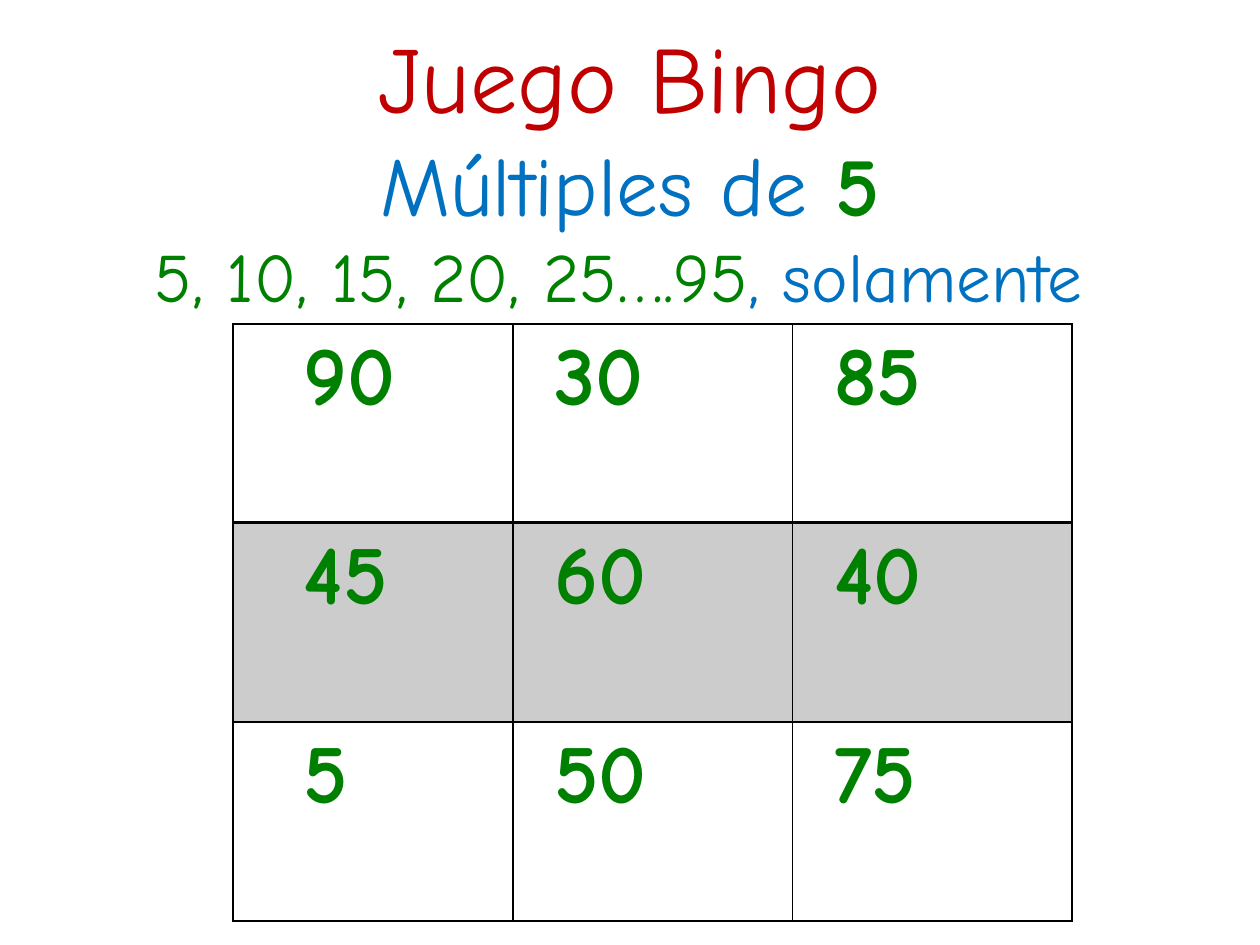
from dataclasses import dataclass

from lxml import etree
from pptx import Presentation
from pptx import util as u
from pptx.dml.color import RGBColor
from pptx.enum import text
from pptx.oxml.ns import qn


@dataclass(frozen=True)
class Theme:
    font: str = "Comic Neue"
    red: str = "C00000"
    blue: str = "0070C0"
    green: str = "008000"
    black: str = "000000"
    title_size: float = 54
    subtitle_size: float = 47.7
    series_size: float = 39.6
    number_size: float = 48
    line: float = 1
    heavy_line: float = 2
    shade_percent: int = 20


THEME = Theme()
WIDTH, HEIGHT = u.Inches(10), u.Inches(7.5)

# Each line of the heading is a list of runs: wording, size, colour, bold
HEADING = [
    [("Juego Bingo", THEME.title_size, THEME.red, False)],
    [("Múltiples de ", THEME.subtitle_size, THEME.blue, False),
     ("5", THEME.subtitle_size, THEME.green, True)],
    [("5, 10, 15, 20, 25….95", THEME.series_size, THEME.green, False),
     (", solamente ", THEME.series_size, THEME.blue, False)],
]
NUMBERS = [[90, 30, 85], [45, 60, 40], [5, 50, 75]]
SHADED_ROW = 1
INDENTS = [0.56, 0.33, 0.33]  # left inset of each column, inches


def add_run(paragraph, wording, size, color, bold):
    run = paragraph.add_run()
    run.text = wording
    run.font.name = THEME.font
    run.font.size = u.Pt(size)
    run.font.bold = bold
    run.font.color.rgb = RGBColor.from_string(color)


def fill_title(title):
    title.left, title.top = int(WIDTH * 0.075), u.Inches(0.84)
    title.width, title.height = int(WIDTH * 0.85), u.Inches(1.61)
    frame = title.text_frame
    frame.word_wrap = True
    frame.auto_size = text.MSO_AUTO_SIZE.NONE
    frame.vertical_anchor = text.MSO_ANCHOR.MIDDLE
    frame.margin_bottom = u.Inches(0.68)  # lifts the heading clear of the card
    paragraph = frame.paragraphs[0]
    paragraph.alignment = text.PP_ALIGN.CENTER
    for index, line in enumerate(HEADING):
        if index:
            paragraph.add_line_break()
        for run in line:
            add_run(paragraph, *run)


def set_border(cell, side, width):
    properties = cell._tc.get_or_add_tcPr()
    line = etree.SubElement(properties, qn(f"a:ln{side}"), w=str(u.Pt(width)))
    fill = etree.SubElement(line, qn("a:solidFill"))
    etree.SubElement(fill, qn("a:srgbClr"), val=THEME.black)


def shade(cell):
    cell.fill.solid()
    cell.fill.fore_color.rgb = RGBColor.from_string(THEME.black)
    color = cell._tc.tcPr.find(".//" + qn("a:solidFill") + "[last()]")
    color = cell._tc.tcPr.find(qn("a:solidFill") + "/" + qn("a:srgbClr"))
    etree.SubElement(color, qn("a:alpha"), val=str(THEME.shade_percent * 1000))


def fill_cell(cell, number, row, column):
    # Borders: a heavy rule parts the first row from the second
    for side in "LRTB":
        heavy = (row, side) in ((0, "B"), (1, "T"))
        set_border(cell, side, THEME.heavy_line if heavy else THEME.line)
    if row == SHADED_ROW:
        shade(cell)
    else:
        cell.fill.background()
    cell.margin_left = u.Inches(INDENTS[column])
    add_run(cell.text_frame.paragraphs[0], str(number),
            THEME.number_size, THEME.green, True)


def add_card(slide):
    side = len(NUMBERS)
    table = slide.shapes.add_table(
        side, side, int(WIDTH * 0.185), u.Inches(2.57),
        u.Inches(2.22 * side), u.Inches(1.58 * side)).table
    table.first_row = table.horz_banding = False
    for row, numbers in enumerate(NUMBERS):
        for column, number in enumerate(numbers):
            fill_cell(table.cell(row, column), number, row, column)


def main():
    presentation = Presentation()
    presentation.slide_width, presentation.slide_height = WIDTH, HEIGHT
    slide = presentation.slides.add_slide(presentation.slide_layouts[0])

    # Heading in the title placeholder; the subtitle is not needed
    fill_title(slide.shapes.title)
    subtitle = slide.placeholders[1].element
    subtitle.getparent().remove(subtitle)

    # Bingo card
    add_card(slide)
    presentation.save("out.pptx")


if __name__ == "__main__":
    main()
